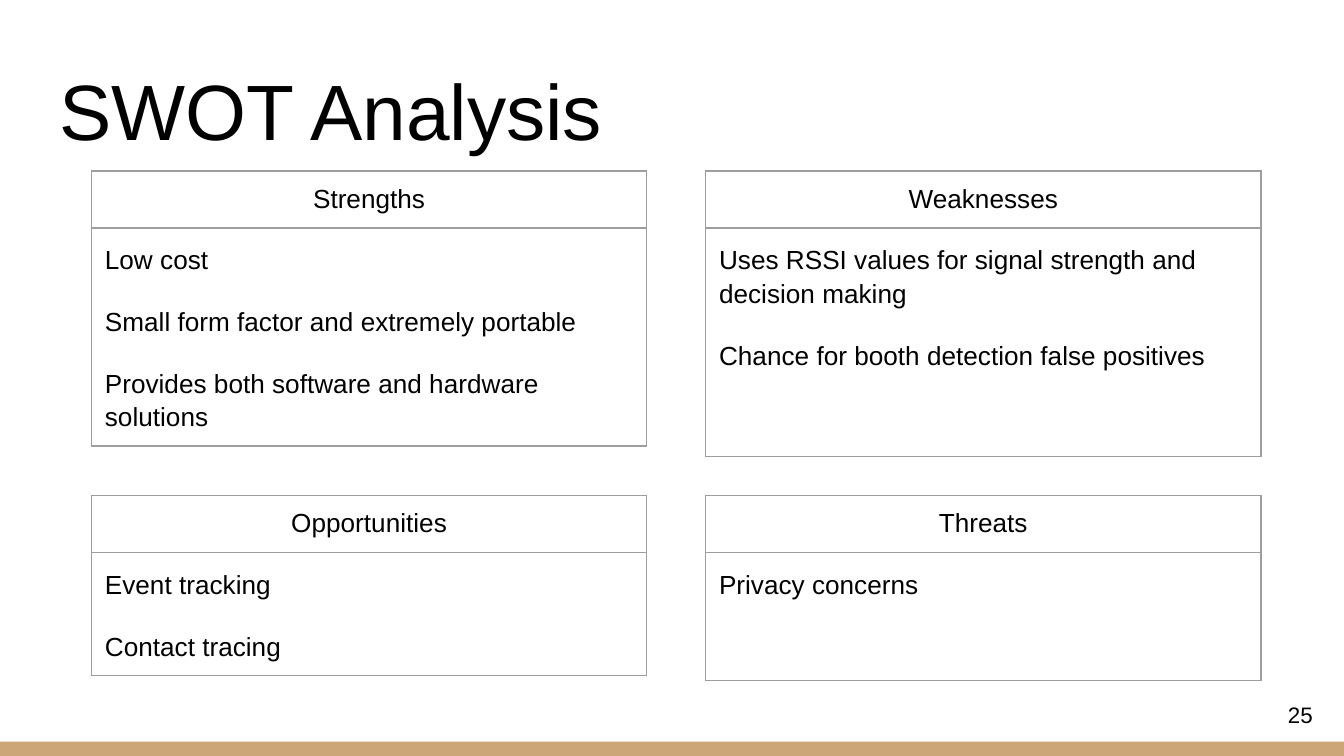
import lxml.etree
import pptx
import pptx.dml.color
import pptx.enum.shapes
import pptx.enum.text
import pptx.oxml.ns
import pptx.util

Pt = pptx.util.Pt
Align = pptx.enum.text.PP_ALIGN
Anchor = pptx.enum.text.MSO_ANCHOR

FONT = "Arial"
BLACK, GOLD, GREY = "000000", "CCA677", "9E9E9E"
INSET = 7.2
TABLE_WIDTH, HEADER_HEIGHT = 297.5, 30.6
LEFT, RIGHT = 49, 378
TOP, BOTTOM = 91.6, 265.6

# Heading, left, top, body height, statements
QUADRANTS = [
    ("Strengths", LEFT, TOP, 116,
     ["Low cost", "Small form factor and extremely portable",
      "Provides both software and hardware solutions"]),
    ("Weaknesses", RIGHT, TOP, 122.4,
     ["Uses RSSI values for signal strength and decision making",
      "Chance for booth detection false positives"]),
    ("Opportunities", LEFT, BOTTOM, 65, ["Event tracking", "Contact tracing"]),
    ("Threats", RIGHT, BOTTOM, 68.4, ["Privacy concerns"]),
]


def color(hex_string):
    return pptx.dml.color.RGBColor.from_string(hex_string)


def set_insets(holder):
    """Give a text frame or a table cell the same margin on all sides."""
    holder.margin_left = holder.margin_right = Pt(INSET)
    holder.margin_top = holder.margin_bottom = Pt(INSET)


def add_run(para, text, size):
    span = para.add_run()
    span.text = text
    span.font.name = FONT
    span.font.size = Pt(size)
    span.font.color.rgb = color(BLACK)


def fill_text(box, text, size, align, anchor):
    """Write one line into a placeholder or a text box."""
    frame = box.text_frame
    frame.word_wrap = True
    frame.auto_size = pptx.enum.text.MSO_AUTO_SIZE.NONE
    frame.vertical_anchor = anchor
    set_insets(frame)
    para = frame.paragraphs[0]
    para.alignment = align
    add_run(para, text, size)


def set_title(page, text):
    title = page.shapes.title
    title.left, title.top = Pt(24.5), Pt(25.2)
    title.width, title.height = Pt(671), Pt(65.5)
    fill_text(title, text, 42, Align.LEFT, Anchor.BOTTOM)


def add_footer_bar(page):
    bar = page.shapes.add_shape(pptx.enum.shapes.MSO_SHAPE.RECTANGLE,
                                Pt(0), Pt(397.4), Pt(720), Pt(7.6))
    bar.shadow.inherit = False
    bar.fill.solid()
    bar.fill.fore_color.rgb = color(GOLD)
    bar.line.fill.background()


def add_page_number(page, number):
    box = page.shapes.add_textbox(Pt(667.2), Pt(367.5), Pt(43.2), Pt(31))
    fill_text(box, number, 12, Align.RIGHT, Anchor.MIDDLE)


def set_borders(cell):
    """Draw a thin grey line on each side, ahead of the cell's fill."""
    properties = cell._tc.get_or_add_tcPr()
    qn = pptx.oxml.ns.qn
    for index, side in enumerate(("a:lnL", "a:lnR", "a:lnT", "a:lnB")):
        line = lxml.etree.Element(qn(side), w=str(Pt(0.75)))
        fill = lxml.etree.SubElement(line, qn("a:solidFill"))
        lxml.etree.SubElement(fill, qn("a:srgbClr"), val=GREY)
        properties.insert(index, line)


def add_quadrant(page, heading, left, top, body_height, statements):
    frame = page.shapes.add_table(2, 1, Pt(left), Pt(top), Pt(TABLE_WIDTH),
                                  Pt(HEADER_HEIGHT + body_height))
    table = frame.table
    table.first_row = table.horz_banding = False
    table.rows[0].height = Pt(HEADER_HEIGHT)
    table.rows[1].height = Pt(body_height)
    header, body = table.cell(0, 0), table.cell(1, 0)
    for cell in (header, body):
        cell.fill.background()
        set_insets(cell)
        set_borders(cell)

    para = header.text_frame.paragraphs[0]
    para.alignment = Align.CENTER
    add_run(para, heading, 14)

    for index, statement in enumerate(statements):
        text = body.text_frame
        para = text.add_paragraph() if index else text.paragraphs[0]
        para.line_spacing = 1.15
        para.space_before = Pt(15 if index else 0)
        add_run(para, statement, 14)


def main():
    deck = pptx.Presentation()
    deck.slide_width, deck.slide_height = Pt(720), Pt(405)
    page = deck.slides.add_slide(deck.slide_layouts[5])  # title only

    # Frame of the page
    add_footer_bar(page)
    set_title(page, "SWOT Analysis")

    # Four quadrants
    for quadrant in QUADRANTS:
        add_quadrant(page, *quadrant)

    add_page_number(page, "25")
    deck.save("out.pptx")


if __name__ == "__main__":
    main()
